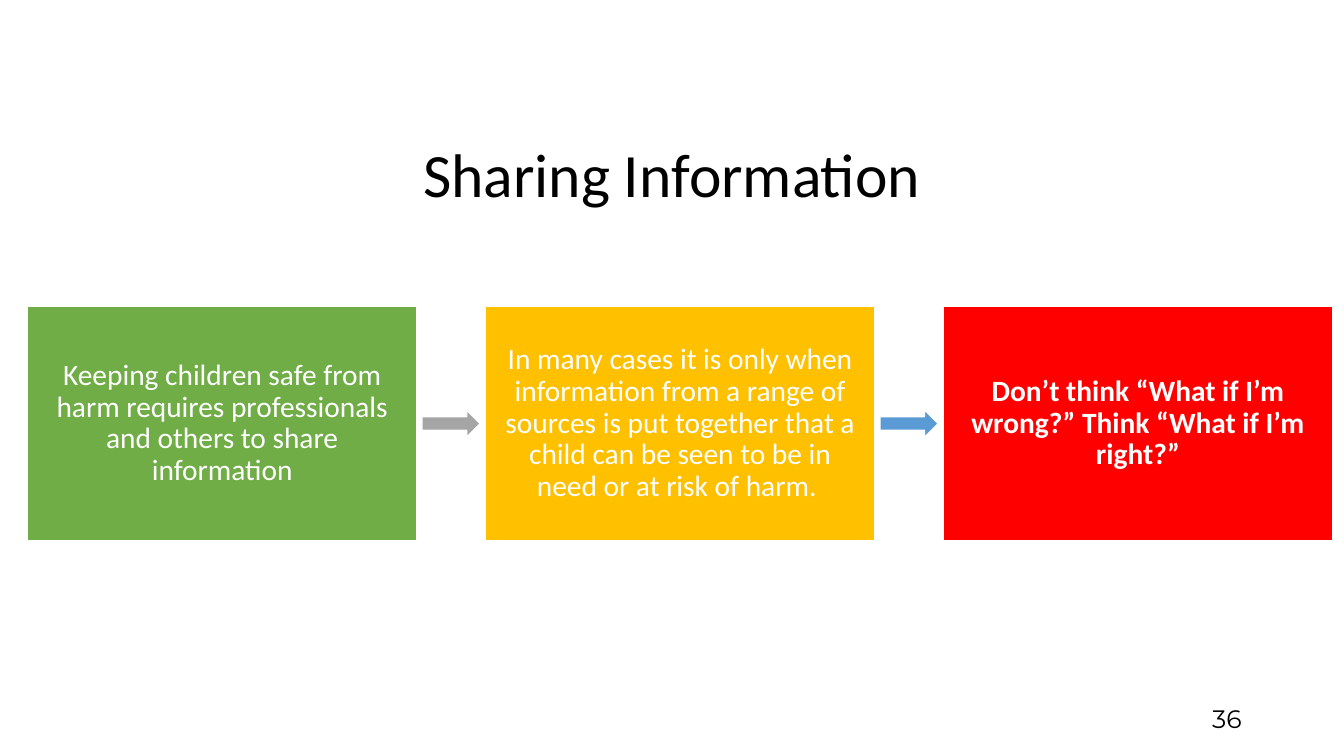
from pptx import Presentation
from pptx.dml.color import RGBColor
from pptx.enum.shapes import MSO_SHAPE
from pptx.enum.text import MSO_ANCHOR, PP_ALIGN
from pptx.util import Cm, Pt

RECT, ARROW = MSO_SHAPE.RECTANGLE, MSO_SHAPE.RIGHT_ARROW
MIDDLE = MSO_ANCHOR.MIDDLE
CENTER, RIGHT = PP_ALIGN.CENTER, PP_ALIGN.RIGHT


def rgb(value):
    return RGBColor.from_string(value)


def write(tf, text, size=21, font="Calibri", color="000000", bold=False,
          align=CENTER, inset_x=0.25, inset_y=0.13):
    tf.word_wrap = True
    tf.vertical_anchor = MIDDLE
    tf.margin_left = tf.margin_right = Cm(inset_x)
    tf.margin_top = tf.margin_bottom = Cm(inset_y)
    p = tf.paragraphs[0]
    p.alignment = align
    p.line_spacing = 0.9
    r = p.add_run()
    r.text = text
    r.font.name = font
    r.font.size = Pt(size)
    r.font.bold = bold
    r.font.color.rgb = rgb(color)


class SlideBuilder:
    white = "FFFFFF"

    def __init__(self, prs):
        self.s = prs.slides.add_slide(prs.slide_layouts[6])

    def text(self, x, y, w, h, text, **style):
        box = self.s.shapes.add_textbox(Cm(x), Cm(y), Cm(w), Cm(h))
        write(box.text_frame, text, **style)

    def shape(self, kind, x, y, w, h, fill):
        sp = self.s.shapes.add_shape(kind, Cm(x), Cm(y), Cm(w), Cm(h))
        sp.shadow.inherit = False
        sp.fill.solid()
        sp.fill.fore_color.rgb = rgb(fill)
        sp.line.color.rgb = rgb(self.white)
        sp.line.width = Pt(1)
        return sp

    def step(self, x, y, w, h, fill, text, bold):
        sp = self.shape(RECT, x, y, w, h, fill)
        write(sp.text_frame, text, color=self.white, bold=bold,
              inset_x=0.43, inset_y=0.43)

    def arrow(self, x, y, w, h, fill):
        self.shape(ARROW, x, y, w, h, fill)


def main():
    prs = Presentation()
    prs.slide_width, prs.slide_height = Cm(33.87), Cm(19.05)
    slide = SlideBuilder(prs)

    # Title and page number
    slide.text(2.33, 2.64, 29.21, 3.68, "Sharing Information", size=44)
    slide.text(23.92, 17.65, 7.62, 1.02, "36", size=18, font="Montserrat",
               align=RIGHT)

    # Three steps, with an arrow after each but the last
    steps = [
        ("70AD47", "Keeping children safe from harm requires professionals "
                   "and others to share information", False, "A5A5A5"),
        ("FFC000", "In many cases it is only when information from a range of "
                   "sources is put together that a child can be seen to be in "
                   "need or at risk of harm. ", False, "5B9BD5"),
        ("FF0000", "Don’t think “What if I’m wrong?” "
                   "Think “What if I’m right?”", True, None),
    ]
    left, top, width, height, pitch = 0.69, 7.73, 9.82, 5.89, 11.54
    arrow_w, arrow_h = 1.47, 0.69
    gap = (pitch - width - arrow_w) / 2
    for i, (fill, text, bold, arrow_fill) in enumerate(steps):
        x = left + i * pitch
        slide.step(x, top, width, height, fill, text, bold)
        if arrow_fill:
            slide.arrow(x + width + gap, top + (height - arrow_h) / 2,
                        arrow_w, arrow_h, arrow_fill)

    prs.save("out.pptx")


if __name__ == "__main__":
    main()
